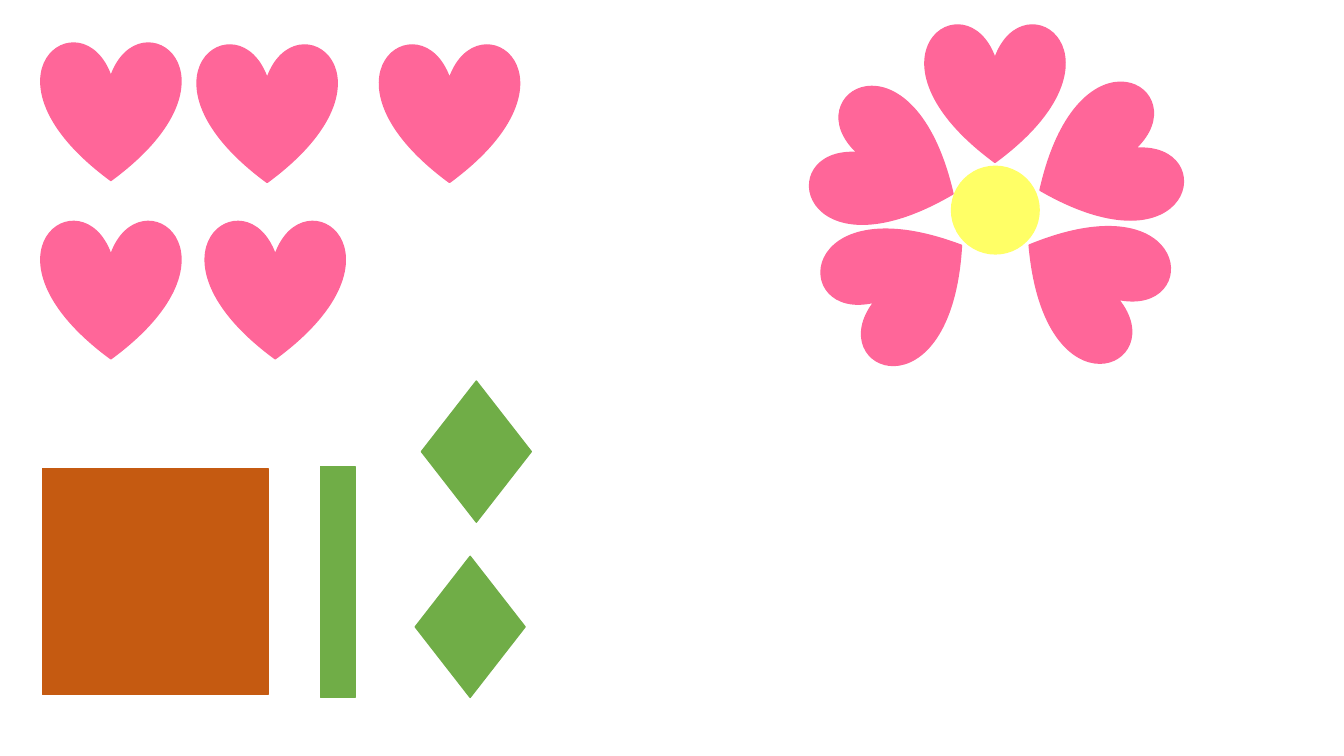
from dataclasses import dataclass

import pptx
import pptx.dml.color
import pptx.enum.shapes
import pptx.util

Pt = pptx.util.Pt
Preset = pptx.enum.shapes.MSO_SHAPE


@dataclass(frozen=True)
class Theme:
    petal: str = "FF6699"
    centre: str = "FFFF66"
    leaf: str = "70AD47"
    pot: str = "C55A11"
    outline: float = 1
    heart: float = 99.4


THEME = Theme()


def add_piece(slide, preset, left, top, width, height, colour, rotation=0):
    piece = slide.shapes.add_shape(preset, Pt(left), Pt(top), Pt(width), Pt(height))
    piece.rotation = rotation
    piece.shadow.inherit = False
    rgb = pptx.dml.color.RGBColor.from_string(colour)
    piece.fill.solid()
    piece.fill.fore_color.rgb = rgb
    piece.line.color.rgb = rgb
    piece.line.width = Pt(THEME.outline)


def add_petal(slide, left, top, rotation=0):
    add_piece(slide, Preset.HEART, left, top, THEME.heart, THEME.heart, THEME.petal, rotation)


def add_stem_parts(slide, left, top):
    add_piece(slide, Preset.RECTANGLE, left + 198.8, top + 61.2, 24.5, 164.9, THEME.leaf)
    for leaf_x, leaf_y in ((266.4, 125.2), (270.8, 0)):
        add_piece(slide, Preset.DIAMOND, left + leaf_x, top + leaf_y, 78.5, 100.8, THEME.leaf)
    add_piece(slide, Preset.RECTANGLE, left, top + 62.6, 161.3, 161.3, THEME.pot)


def add_loose_petals(slide, left, top):
    for x, y in ((0, 0), (0, 127.4), (117.4, 127.4), (241.9, 1.4), (111.6, 1.4)):
        add_petal(slide, left + x, top + y)


def add_flower(slide, left, top):
    add_piece(slide, Preset.OVAL, left + 94.3, top + 102.2, 62.6, 62.6, THEME.centre)
    petals = (
        (10, 136, 237),
        (142.5, 134.6, 121.3),
        (0, 52.5, 293.3),
        (153.3, 49.6, 66.3),
        (75.6, 0, 0),
    )
    for x, y, rotation in petals:
        add_petal(slide, left + x, top + y, rotation)


def main():
    deck = pptx.Presentation()
    deck.slide_width, deck.slide_height = Pt(960), Pt(540)
    slide = deck.slides.add_slide(deck.slide_layouts.get_by_name("Blank"))
    add_stem_parts(slide, 30.2, 272.2)
    add_loose_petals(slide, 29.5, 29.5)
    add_flower(slide, 585.4, 16.6)
    deck.save("out.pptx")


if __name__ == "__main__":
    main()
